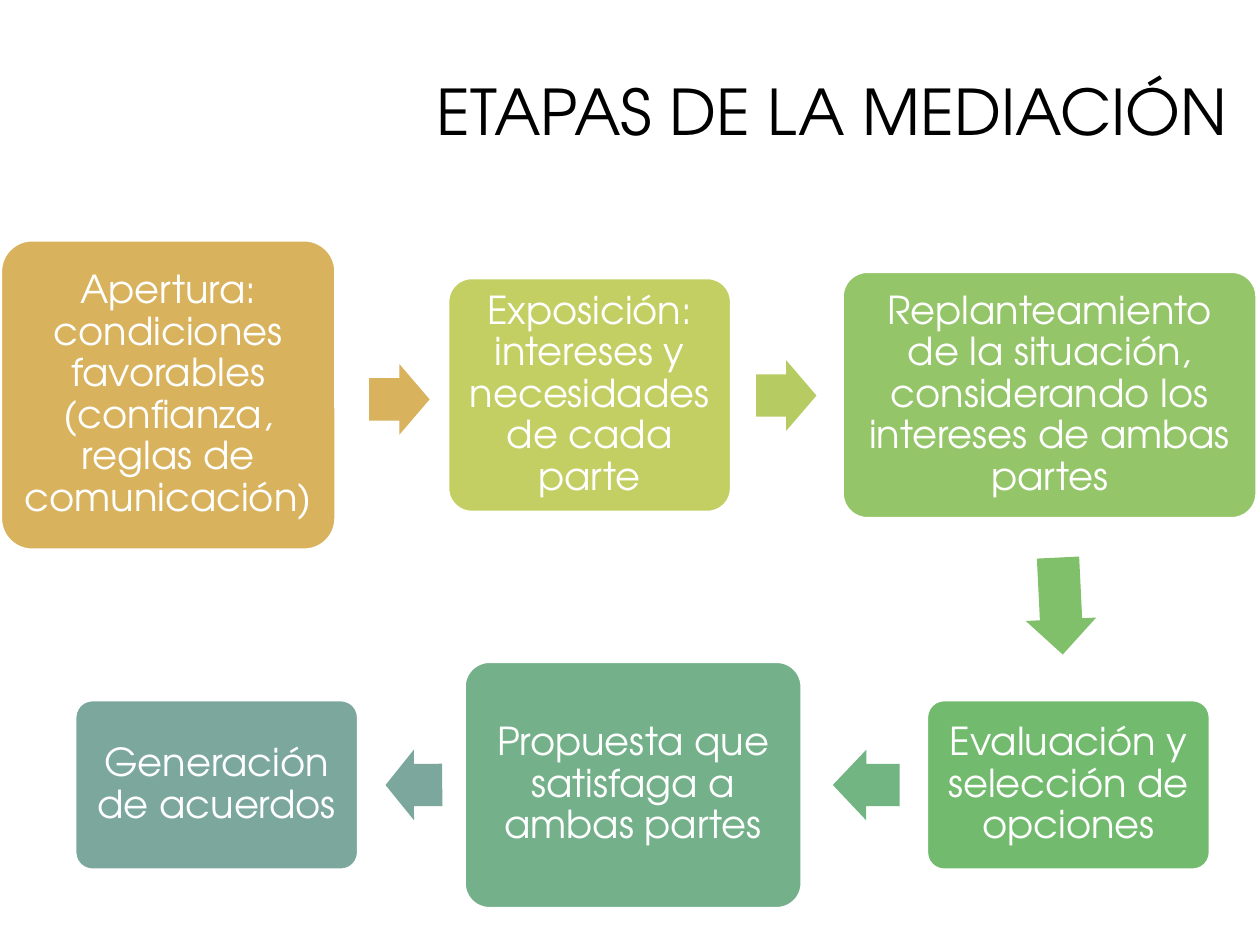
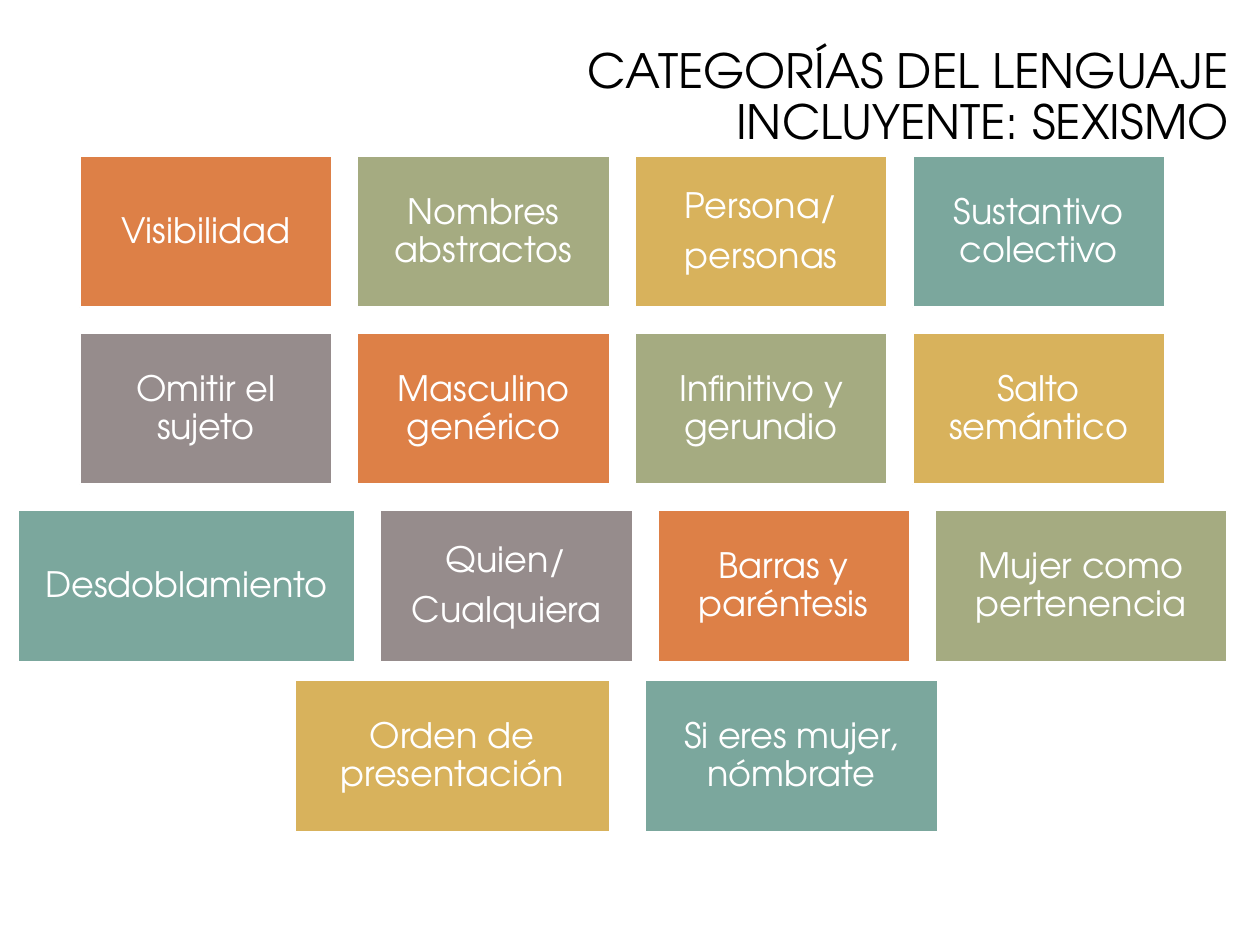
import pptx
import pptx.util
import pptx.dml.color
import pptx.enum.shapes
import pptx.enum.text

RGBColor = pptx.dml.color.RGBColor
MSO_SHAPE = pptx.enum.shapes.MSO_SHAPE
PP_ALIGN = pptx.enum.text.PP_ALIGN
Pt = pptx.util.Pt

# Shared style
FONT = "TeX Gyre Adventor"
BLACK = RGBColor(0x00, 0x00, 0x00)
WHITE = RGBColor(0xFF, 0xFF, 0xFF)
ORANGE = RGBColor(0xDD, 0x80, 0x47)
SAGE = RGBColor(0xA5, 0xAB, 0x81)
GOLD = RGBColor(0xD8, 0xB2, 0x5C)
TEAL = RGBColor(0x7B, 0xA7, 0x9D)
GREY = RGBColor(0x96, 0x8C, 0x8C)
LIME = RGBColor(0xC3, 0xCF, 0x62)
LIGHT_LIME = RGBColor(0xB6, 0xCC, 0x63)
LIGHT_GREEN = RGBColor(0x94, 0xC5, 0x68)
MID_GREEN = RGBColor(0x81, 0xC0, 0x6B)
GREEN = RGBColor(0x72, 0xBB, 0x6E)
SEA = RGBColor(0x73, 0xB4, 0x83)
DEEP_SEA = RGBColor(0x74, 0xB1, 0x8A)

# Square grid of 100 columns by 75 rows
WIDTH, HEIGHT = pptx.util.Inches(10), pptx.util.Inches(7.5)
COLUMN, ROW = WIDTH / 100, HEIGHT / 75

# Stages: text, left, width, height, fill; each row shares a centre line
UPPER, LOWER = 31.35, 62.3
UPPER_STAGES = [
    ("Apertura: condiciones favorables (confianza, reglas de comunicación)",
     0.1, 26.5, 24.5, GOLD),
    ("Exposición: intereses y necesidades de cada parte",
     35.6, 22.4, 18.5, LIME),
    ("Replanteamiento de la situación, considerando los intereses "
     "de ambas partes", 66.9, 32.8, 19.5, LIGHT_GREEN),
]
LOWER_STAGES = [
    ("Evaluación y selección de opciones", 73.6, 22.4, 13.4, GREEN),
    ("Propuesta que satisfaga a ambas partes", 36.9, 26.7, 19.5, DEEP_SEA),
    ("Generación de acuerdos", 6, 22.4, 13.4, TEAL),
]

# Arrows: left, centre line, length, rotation, fill
ARROWS = [
    (29.3, 31.7, 4.8, 0, GOLD),
    (60, 31.4, 4.8, 0, LIGHT_LIME),
    (80.3, 48.1, 7.7, 87.2, MID_GREEN),
    (66.1, LOWER, 5.3, 180.1, SEA),
    (30.6, LOWER, 4.5, 179.8, TEAL),
]
ARROW_HEIGHT = 5.6

# Categories: top, left, gap, then (text, width) from left to right
TILE_HEIGHT = 12
TILE_COLOURS = [ORANGE, SAGE, GOLD, TEAL, GREY]
TILE_ROWS = [
    (12.4, 6.35, 2.03, [("Visibilidad", 20), ("Nombres abstractos", 20),
                        ("Persona/\npersonas", 20),
                        ("Sustantivo colectivo", 20)]),
    (26.45, 6.35, 2.03, [("Omitir el sujeto", 20), ("Masculino genérico", 20),
                         ("Infinitivo y gerundio", 20),
                         ("Salto semántico", 20)]),
    (40.5, 1.4, 2, [("Desdoblamiento", 26.8), ("Quien/\nCualquiera", 20),
                    ("Barras y paréntesis", 20),
                    ("Mujer como pertenencia", 23.2)]),
    (54, 23.4, 2.8, [("Orden de presentación", 25),
                     ("Si eres mujer, nómbrate", 23.2)]),
]


def place(left, top, width, height):
    """Turn grid columns and rows into slide lengths."""
    return (round(left * COLUMN), round(top * ROW),
            round(width * COLUMN), round(height * ROW))


def write(s, text, size, colour, align, margin=None, space=0):
    tf = s.text_frame
    tf.text = text
    tf.word_wrap = True
    tf.auto_size = pptx.enum.text.MSO_AUTO_SIZE.NONE
    tf.vertical_anchor = pptx.enum.text.MSO_ANCHOR.MIDDLE
    if margin is not None:
        tf.margin_left = tf.margin_right = round(margin * COLUMN)
        tf.margin_top = tf.margin_bottom = round(margin * ROW)
    for p in tf.paragraphs:
        p.alignment = align
        p.line_spacing = 0.9
        p.space_before = Pt(0)
        p.space_after = Pt(size * space)
        for r in p.runs:
            r.font.name = FONT
            r.font.size = Pt(size)
            r.font.color.rgb = colour


def add_titled_slide(prs, title, size, box):
    slide = prs.slides.add_slide(prs.slide_layouts[5])
    s = slide.shapes.title
    s.left, s.top, s.width, s.height = place(*box)
    write(s, title, size, BLACK, PP_ALIGN.RIGHT)
    return slide


def add_filled(slide, kind, box, fill):
    s = slide.shapes.add_shape(kind, *place(*box))
    s.shadow.inherit = False
    s.fill.solid()
    s.fill.fore_color.rgb = fill
    s.line.fill.background()
    return s


def add_box(slide, kind, box, fill, text, size, margin):
    s = add_filled(slide, kind, box, fill)
    s.line.color.rgb = WHITE
    s.line.width = Pt(1)
    write(s, text, size, WHITE, PP_ALIGN.CENTER, margin, space=0.35)
    return s


def add_stage(slide, centre, text, left, width, height, fill):
    box = (left, centre - height / 2, width, height)
    s = add_box(slide, MSO_SHAPE.ROUNDED_RECTANGLE, box, fill, text, 22, 0.9)
    s.adjustments[0] = 0.1


def add_arrow(slide, left, centre, length, rotation, fill):
    box = (left, centre - ARROW_HEIGHT / 2, length, ARROW_HEIGHT)
    s = add_filled(slide, MSO_SHAPE.RIGHT_ARROW, box, fill)
    s.adjustments[0], s.adjustments[1] = 0.6, 0.5
    s.rotation = rotation


def build_stages(prs):
    slide = add_titled_slide(prs, "ETAPAS DE LA MEDIACIÓN", 36,
                             (28.7, 6, 69.7, 6.3))
    for centre, stages in ((UPPER, UPPER_STAGES), (LOWER, LOWER_STAGES)):
        for stage in stages:
            add_stage(slide, centre, *stage)
    for arrow in ARROWS:
        add_arrow(slide, *arrow)


def build_categories(prs):
    slide = add_titled_slide(
        prs, "CATEGORÍAS DEL LENGUAJE INCLUYENTE: SEXISMO", 27,
        (27.2, 3.5, 71.3, 8.7))
    # Colours run on from one row to the next
    count = 0
    for top, left, gap, tiles in TILE_ROWS:
        for text, width in tiles:
            fill = TILE_COLOURS[count % len(TILE_COLOURS)]
            add_box(slide, MSO_SHAPE.RECTANGLE,
                    (left, top, width, TILE_HEIGHT), fill, text, 20, 0.8)
            left += width + gap
            count += 1


def main():
    prs = pptx.Presentation()
    prs.slide_width, prs.slide_height = WIDTH, HEIGHT
    build_stages(prs)
    build_categories(prs)
    prs.save("out.pptx")


if __name__ == "__main__":
    main()
